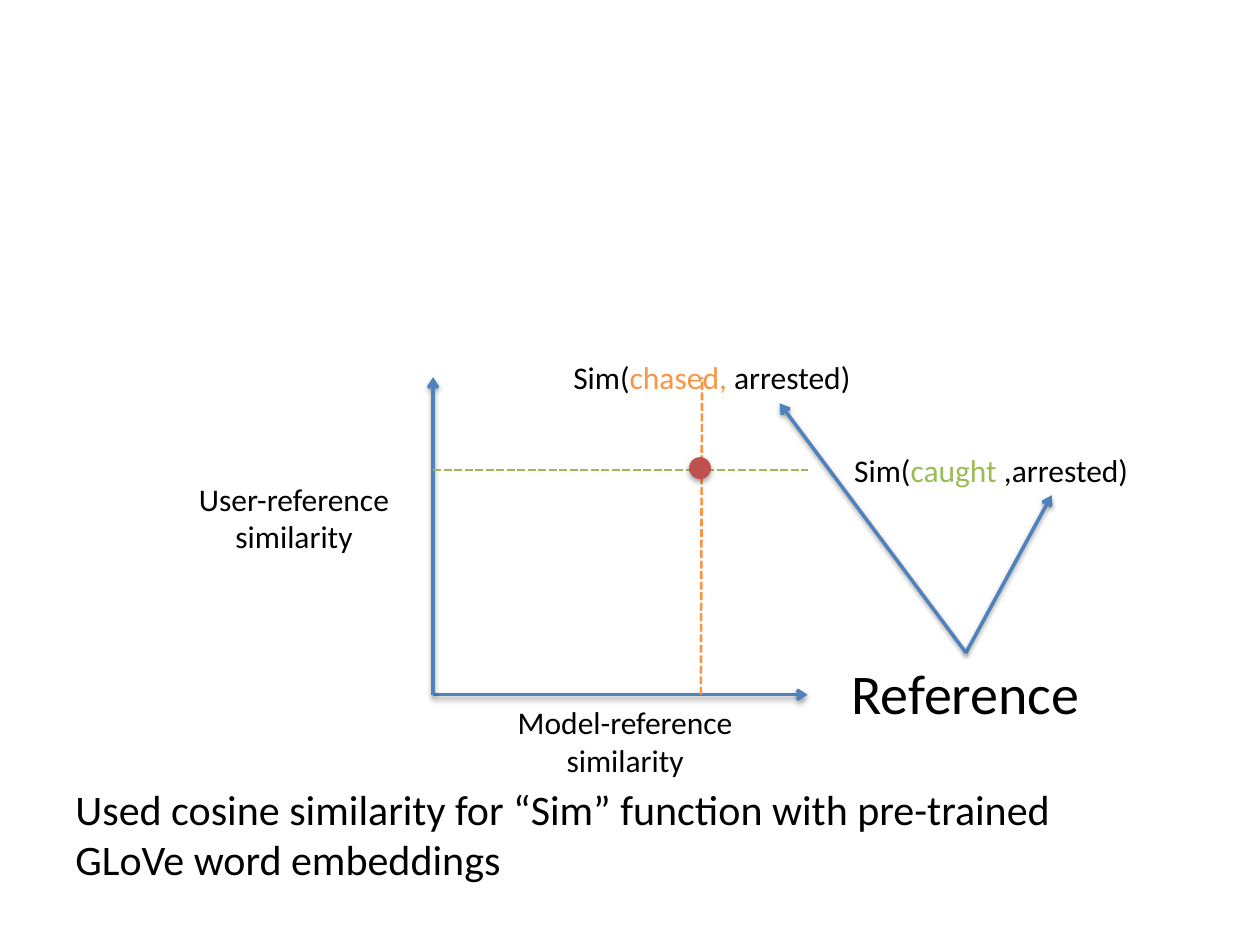
from dataclasses import dataclass

from pptx import Presentation
from pptx import util as u
from pptx.dml.color import RGBColor
from pptx.enum import dml, shapes, text
from pptx.oxml import parse_xml
from pptx.oxml.ns import nsdecls, qn
from pptx.oxml.xmlchemy import OxmlElement


@dataclass(frozen=True)
class Theme:
    font: str = "Calibri"
    ink: str = "000000"
    axis: str = "4F81BD"
    user: str = "9BBB59"
    model: str = "F79646"
    point: str = "C0504D"
    label_size: float = 18
    caption_size: float = 24
    reference_size: float = 32
    axis_width: float = 2
    guide_width: float = 1.5


class SlideBuilder:
    def __init__(self, slide, theme):
        self.slide = slide
        self.theme = theme

    def effects(self, shape, alpha=0, distance=0):
        """Give the shape a soft downward shadow, or none when alpha is 0."""
        properties = shape._element.spPr
        for old in properties.findall(qn("a:effectLst")):
            properties.remove(old)
        shadow = (
            f'<a:outerShdw blurRad="{u.Pt(3.1)}" dist="{u.Pt(distance)}" '
            'dir="5400000" rotWithShape="0"><a:srgbClr val="000000">'
            f'<a:alpha val="{alpha * 1000}"/></a:srgbClr></a:outerShdw>'
        ) if alpha else ""
        properties.append(parse_xml(
            f'<a:effectLst {nsdecls("a")}>{shadow}</a:effectLst>'))

    def line(self, start, end, color, width):
        line = self.slide.shapes.add_connector(
            shapes.MSO_CONNECTOR.STRAIGHT,
            *(u.Pt(value) for value in (*start, *end)))
        line.line.color.rgb = RGBColor.from_string(color)
        line.line.width = u.Pt(width)
        return line

    def arrow(self, start, end):
        arrow = self.line(start, end, self.theme.axis, self.theme.axis_width)
        head = OxmlElement("a:tailEnd")
        head.set("type", "arrow")
        arrow._element.spPr.find(qn("a:ln")).append(head)
        self.effects(arrow, alpha=38, distance=1.6)

    def guide(self, start, end, color):
        guide = self.line(start, end, color, self.theme.guide_width)
        guide.line.dash_style = dml.MSO_LINE.SQUARE_DOT
        self.effects(guide)

    def dot(self, left, top, size):
        dot = self.slide.shapes.add_shape(
            shapes.MSO_SHAPE.OVAL,
            u.Pt(left), u.Pt(top), u.Pt(size), u.Pt(size))
        dot.fill.solid()
        dot.fill.fore_color.rgb = RGBColor.from_string(self.theme.point)
        dot.line.fill.background()
        self.effects(dot, alpha=35, distance=1.8)

    def text(self, box, lines, size, centered=False, wrap=True):
        """Each line is a list of (words, color) runs."""
        frame = self.slide.shapes.add_textbox(
            *(u.Pt(value) for value in box)).text_frame
        frame.word_wrap = wrap
        frame.auto_size = text.MSO_AUTO_SIZE.SHAPE_TO_FIT_TEXT
        for number, runs in enumerate(lines):
            paragraph = frame.add_paragraph() if number else frame.paragraphs[0]
            if centered:
                paragraph.alignment = text.PP_ALIGN.CENTER
            paragraph.font.name = self.theme.font
            paragraph.font.size = u.Pt(size)
            for words, color in runs:
                run = paragraph.add_run()
                run.text = words
                run.font.color.rgb = RGBColor.from_string(color)

    def axis_title(self, box, subject):
        ink = self.theme.ink
        self.text(box, [[(subject, ink)], [("similarity", ink)]],
                  self.theme.label_size, centered=True, wrap=False)

    def similarity(self, left, top, word, color, ending):
        ink = self.theme.ink
        self.text((left, top, 183, 29),
                  [[("Sim(", ink), (word, color), (ending, ink)]],
                  self.theme.label_size)


def main():
    deck = Presentation()
    deck.slide_width, deck.slide_height = u.Pt(720), u.Pt(540)
    theme = Theme()
    page = SlideBuilder(deck.slides.add_slide(deck.slide_layouts[6]), theme)

    # Axes and their titles
    left, bottom, right, top = 247.5, 397, 461.5, 215.5
    page.arrow((left, bottom), (right, bottom))
    page.arrow((left, bottom), (left, top))
    page.axis_title((105, 270.5, 126, 51), "User-reference")
    page.axis_title((287.5, 398, 139.5, 51), "Model-reference")

    # Similarity guides, labels and the point where they cross
    user_y, model_x = 268.5, 400.5
    page.guide((left, user_y), (right, user_y), theme.user)
    page.similarity(481, 254, "caught ", theme.user, ",arrested)")
    page.guide((model_x, bottom), (model_x + 0.7, top), theme.model)
    page.similarity(320.5, 201, "chased, ", theme.model, "arrested)")
    page.dot(393.75, 261.25, 12.5)

    # Reference word, pointing to both labels
    page.text((458.5, 373, 186.5, 46), [[("Reference", theme.ink)]],
              theme.reference_size, centered=True)
    for target in ((601, 283), (445.5, 230.5)):
        page.arrow((552, 373), target)

    # Caption
    caption = ("Used cosine similarity for “Sim” function with pre-trained "
               "GLoVe word embeddings")
    page.text((36, 444, 636, 65.5), [[(caption, theme.ink)]],
              theme.caption_size)

    deck.save("out.pptx")


if __name__ == "__main__":
    main()
